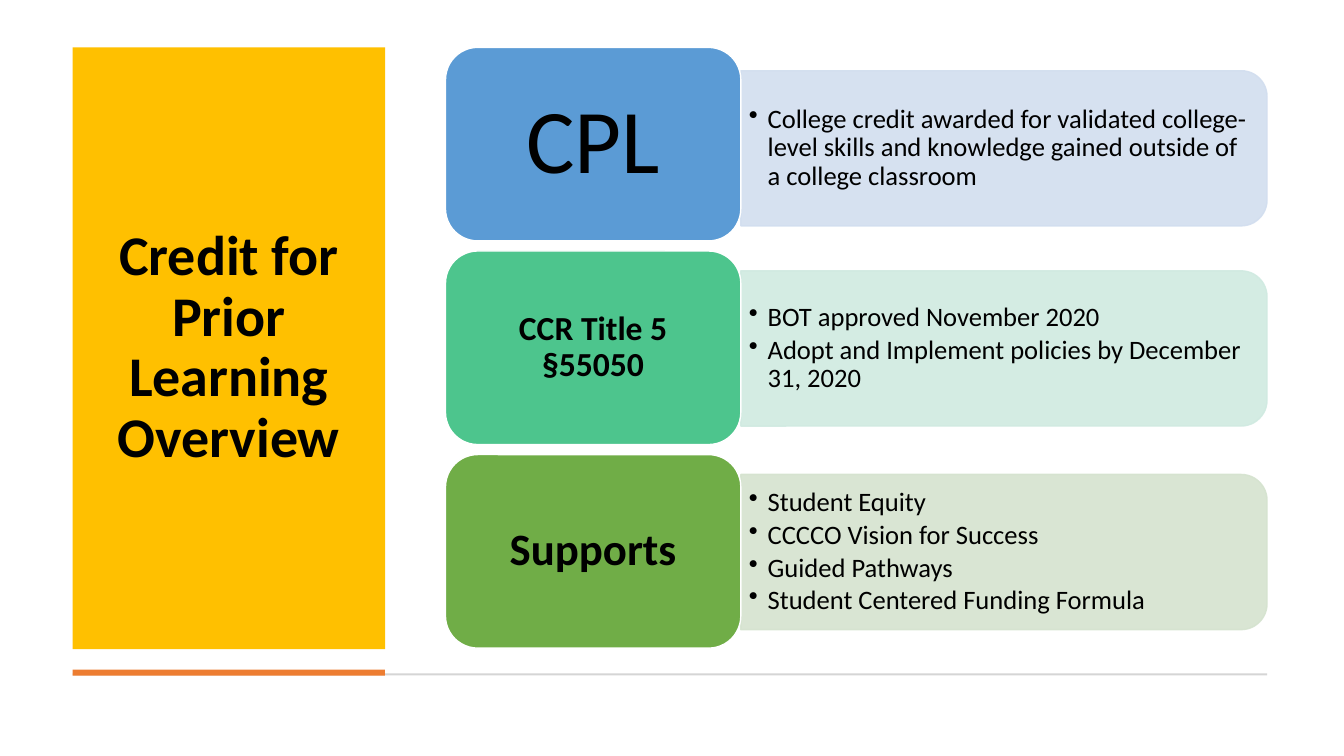
from lxml import etree
from pptx import Presentation
from pptx import util as u
from pptx.dml.color import RGBColor
from pptx.enum import shapes, text
from pptx.oxml.ns import qn

COLOURS = {
    "ink": "000000", "white": "FFFFFF", "gold": "FFC000",
    "rule": "D5D5D5", "accent": "ED7D31",
    "blue": "5B9BD5", "pale blue": "D2DEEF",
    "teal": "4DC58D", "pale teal": "D0EAE1",
    "green": "70AD47", "pale green": "D5E3CF",
}
TOP, LEFT, TITLE_WIDTH, TITLE_HEIGHT = 33.84, 51.84, 223.2, 429.84
CARD_LEFT, CARD_WIDTH, CARD_HEIGHT, PITCH = 318.24, 210.96, 138.24, 145.44
PANEL_LEFT, PANEL_WIDTH, PANEL_HEIGHT = CARD_LEFT + CARD_WIDTH, 375.84, 110.88
TEXT_WIDTH, TEXT_HEIGHT = 370.08, 100.08
ROWS = [
    {"label": "CPL", "size": 65, "bold": False, "inset": 19.4, "drop": 3,
     "card": "blue", "panel": "pale blue",
     "points": ["College credit awarded for validated college-level skills "
                "and knowledge gained outside of a college classroom"]},
    {"label": "CCR Title 5 §55050", "size": 24, "bold": True, "inset": 10,
     "drop": 0.5, "card": "teal", "panel": "pale teal",
     "points": ["BOT approved November 2020",
                "Adopt and Implement policies by December 31, 2020"]},
    {"label": "Supports", "size": 32, "bold": True, "inset": 9.4, "drop": 0.5,
     "card": "green", "panel": "pale green",
     "points": ["Student Equity", "CCCCO Vision for Success",
                "Guided Pathways", "Student Centered Funding Formula"]},
]


def assign(target, values):
    for name, value in values.items():
        setattr(target, name, value)


class Page:
    """Draw styled elements on one slide."""

    def __init__(self, deck):
        self.slide = deck.slides.add_slide(deck.slide_layouts[5])
        self.font = "Calibri"

    def colour(self, name):
        return RGBColor.from_string(COLOURS[name])

    def fill(self, shape, name):
        shape.fill.solid()
        shape.fill.fore_color.rgb = self.colour(name)

    def place(self, shape, left, top, width, height):
        assign(shape, {"left": u.Pt(left), "top": u.Pt(top),
                       "width": u.Pt(width), "height": u.Pt(height)})

    def letter(self, shape, lines, size, bold=False, inset=(7.2, 3.6),
               align=text.PP_ALIGN.CENTER, gap=0):
        frame = shape.text_frame
        across, down = map(u.Pt, inset)
        assign(frame, {"word_wrap": True, "auto_size": text.MSO_AUTO_SIZE.NONE,
                       "vertical_anchor": text.MSO_ANCHOR.MIDDLE,
                       "margin_left": across, "margin_right": across,
                       "margin_top": down, "margin_bottom": down})
        frame.text = "\n".join(lines)
        for para in frame.paragraphs:
            assign(para, {"alignment": align, "line_spacing": 0.9,
                          "space_before": u.Pt(0), "space_after": u.Pt(gap)})
            for span in para.runs:
                assign(span.font, {"name": self.font, "size": u.Pt(size), "bold": bold})
                span.font.color.rgb = self.colour("ink")

    def title(self, words):
        box = self.slide.shapes.title
        self.place(box, LEFT, TOP, TITLE_WIDTH, TITLE_HEIGHT)
        self.fill(box, "gold")
        self.letter(box, [words], 40, bold=True)

    def block(self, kind, bounds, fill, line=None):
        box = self.slide.shapes.add_shape(kind, *map(u.Pt, bounds))
        box.shadow.inherit = False
        self.fill(box, fill)
        if line:
            box.line.width = u.Pt(1)
            box.line.color.rgb = self.colour(line)
        else:
            box.line.fill.background()
        return box

    def panel(self, middle, fill):
        bounds = (PANEL_LEFT + (PANEL_WIDTH - PANEL_HEIGHT) / 2,
                  middle - PANEL_WIDTH / 2, PANEL_HEIGHT, PANEL_WIDTH)
        box = self.block(shapes.MSO_SHAPE.ROUND_2_SAME_RECTANGLE, bounds, fill, fill)
        box.rotation = 90
        for tint in box.element.spPr.iter(qn("a:srgbClr")):
            etree.SubElement(tint, qn("a:alpha"), val="90000")

    def bullets(self, middle, points):
        bounds = (PANEL_LEFT, middle - TEXT_HEIGHT / 2, TEXT_WIDTH, TEXT_HEIGHT)
        box = self.slide.shapes.add_textbox(*map(u.Pt, bounds))
        self.letter(box, points, 19, inset=(5.7, 2.85),
                    align=text.PP_ALIGN.LEFT, gap=2.85)
        for para in box.text_frame.paragraphs:
            properties = para._p.get_or_add_pPr()
            properties.set("marL", str(u.Pt(13.5)))
            properties.set("indent", str(u.Pt(-13.5)))
            etree.SubElement(properties, qn("a:buChar"), char="•")

    def card(self, top, row):
        box = self.block(shapes.MSO_SHAPE.ROUNDED_RECTANGLE,
                         (CARD_LEFT, top, CARD_WIDTH, CARD_HEIGHT),
                         row["card"], "white")
        self.letter(box, [row["label"]], row["size"], row["bold"],
                    (row["inset"], row["inset"] / 2))


def main():
    deck = Presentation()
    assign(deck, {"slide_width": u.Pt(960), "slide_height": u.Pt(540)})
    page = Page(deck)
    page.title("Credit for Prior Learning\vOverview")
    rectangle = shapes.MSO_SHAPE.RECTANGLE
    page.block(rectangle, (LEFT, 480.96, 853.2, 1.44), "rule")
    page.block(rectangle, (LEFT, 478.4, TITLE_WIDTH, 4.32), "accent")
    for index, row in enumerate(ROWS):
        top = TOP + index * PITCH
        middle = top + CARD_HEIGHT / 2 + row["drop"]
        page.panel(middle, row["panel"])
        page.bullets(middle, row["points"])
        page.card(top, row)
    deck.save("out.pptx")


if __name__ == "__main__":
    main()
